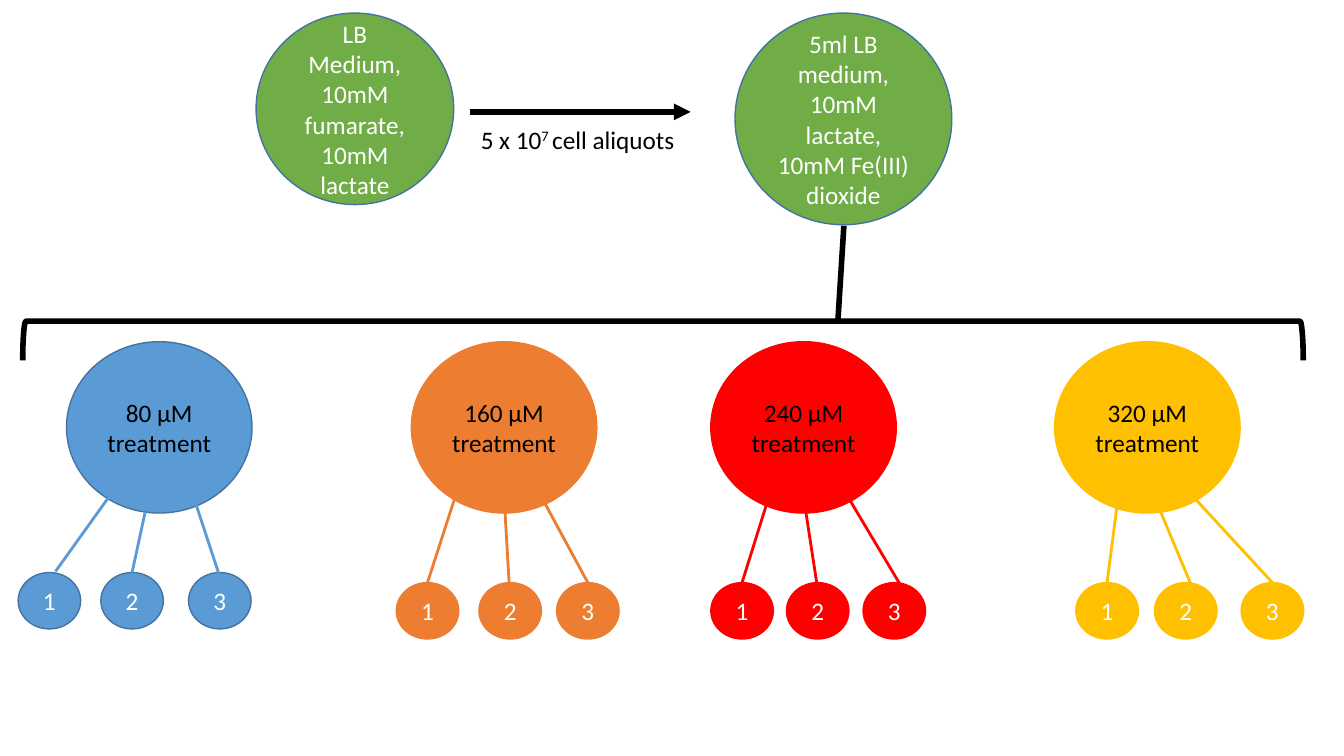
from pptx import Presentation, util as u
from pptx.dml.color import RGBColor
from pptx.enum import shapes, text
from pptx.oxml import parse_xml
from pptx.oxml.ns import nsdecls, qn

COLORS = {
    "black": "000000", "white": "FFFFFF", "green": "70AD47", "blue": "5B9BD5",
    "outline": "43739E", "orange": "ED7D31", "red": "FF0000", "yellow": "FFC000",
}

# label, colour, outline, circle left, replicate top, replicate lefts, branches (x1, y1, x2, y2)
TREATMENTS = [
    ("80 µM treatment", "blue", "outline", 0.66, 5.68, (0.18, 1.0, 1.87),
     ((1.08, 4.93, 0.55, 5.67), (1.44, 5.08, 1.31, 5.68), (1.92, 4.93, 2.17, 5.69))),
    ("160 µM treatment", "orange", "orange", 4.08, 5.78, (3.93, 4.75, 5.52),
     ((4.55, 4.82, 4.24, 5.78), (5.0, 4.93, 5.06, 5.96), (5.37, 4.93, 5.83, 5.78))),
    ("240 µM treatment", "red", "red", 7.05, 5.78, (7.05, 7.8, 8.56),
     ((7.66, 4.82, 7.36, 5.78), (7.97, 4.93, 8.1, 5.78), (8.41, 4.93, 9.03, 5.97))),
    ("320 µM treatment", "yellow", "yellow", 10.46, 5.78, (10.67, 11.45, 12.31),
     ((11.09, 4.93, 10.98, 5.78), (11.45, 4.93, 11.88, 5.96), (11.8, 4.89, 12.62, 5.78))),
]


def rgb(name):
    return RGBColor.from_string(COLORS[name])


class Diagram:
    font_name = "Calibri"
    font_size = u.Pt(18)

    def __init__(self, slide):
        self.slide = slide

    def add_run(self, paragraph, content, color):
        run = paragraph.add_run()
        run.text = content
        run.font.name = self.font_name
        run.font.size = self.font_size
        run.font.color.rgb = rgb(color)
        return run

    def circle(self, label, box, fill, outline, color="white"):
        shape = self.slide.shapes.add_shape(
            shapes.MSO_SHAPE.OVAL, *(u.Inches(value) for value in box))
        shape.shadow.inherit = False
        shape.fill.solid()
        shape.fill.fore_color.rgb = rgb(fill)
        shape.line.color.rgb = rgb(outline)
        shape.line.width = u.Pt(1)
        frame = shape.text_frame
        frame.word_wrap = True
        frame.vertical_anchor = text.MSO_ANCHOR.MIDDLE
        paragraph = frame.paragraphs[0]
        paragraph.alignment = text.PP_ALIGN.CENTER
        self.add_run(paragraph, label, color)

    def line(self, ends, color="black", width=4, arrow=False):
        connector = self.slide.shapes.add_connector(
            shapes.MSO_CONNECTOR.STRAIGHT, *(u.Inches(value) for value in ends))
        connector.line.color.rgb = rgb(color)
        connector.line.width = u.Pt(width)
        if arrow:
            connector.line._get_or_add_ln().append(
                parse_xml(f'<a:tailEnd {nsdecls("a")} type="triangle"/>'))
        connector._element.find(qn("p:spPr")).append(
            parse_xml(f'<a:effectLst {nsdecls("a")}/>'))

    def bracket(self, box):
        """Draw a left bracket turned to open downwards; box is its place before turning."""
        shape = self.slide.shapes.add_shape(
            shapes.MSO_SHAPE.LEFT_BRACKET, *(u.Inches(value) for value in box))
        shape.rotation = 90
        shape.shadow.inherit = False
        shape.fill.background()
        shape.line.color.rgb = rgb("black")
        shape.line.width = u.Pt(4)

    def caption(self, box, parts):
        """Write one line from (text, superscript) parts."""
        shape = self.slide.shapes.add_textbox(*(u.Inches(value) for value in box))
        frame = shape.text_frame
        frame.word_wrap = False
        frame.auto_size = text.MSO_AUTO_SIZE.SHAPE_TO_FIT_TEXT
        for content, superscript in parts:
            run = self.add_run(frame.paragraphs[0], content, "black")
            if superscript:
                run.font._element.set("baseline", "30000")


def main():
    presentation = Presentation()
    presentation.slide_width = u.Inches(13.33)
    presentation.slide_height = u.Inches(7.5)
    diagram = Diagram(presentation.slides.add_slide(presentation.slide_layouts[6]))

    diagram.circle("LB Medium, 10mM fumarate, 10mM lactate",
                   (2.54, 0.13, 1.96, 1.9), "green", "outline")
    diagram.caption((4.67, 1.18, 2.18, 0.4),
                    [("5 x 10", False), ("7 ", True), ("cell aliquots", False)])
    diagram.line((4.66, 1.11, 6.85, 1.11), arrow=True)
    diagram.circle("5ml LB medium, 10mM lactate, 10mM Fe(III) dioxide",
                   (7.29, 0.13, 2.15, 2.1), "green", "outline")

    for label, fill, outline, left, replicate_top, replicate_lefts, branches in TREATMENTS:
        diagram.circle(label, (left, 3.39, 1.84, 1.7), fill, outline, "black")
        for number, replicate_left in enumerate(replicate_lefts, 1):
            diagram.circle(str(number), (replicate_left, replicate_top, 0.62, 0.56),
                           fill, outline)
        for branch in branches:
            diagram.line(branch, fill, 2)

    diagram.bracket((6.38, -2.97, 0.39, 12.7))
    diagram.line((8.37, 2.24, 8.31, 3.19))
    presentation.save("out.pptx")


if __name__ == "__main__":
    main()
